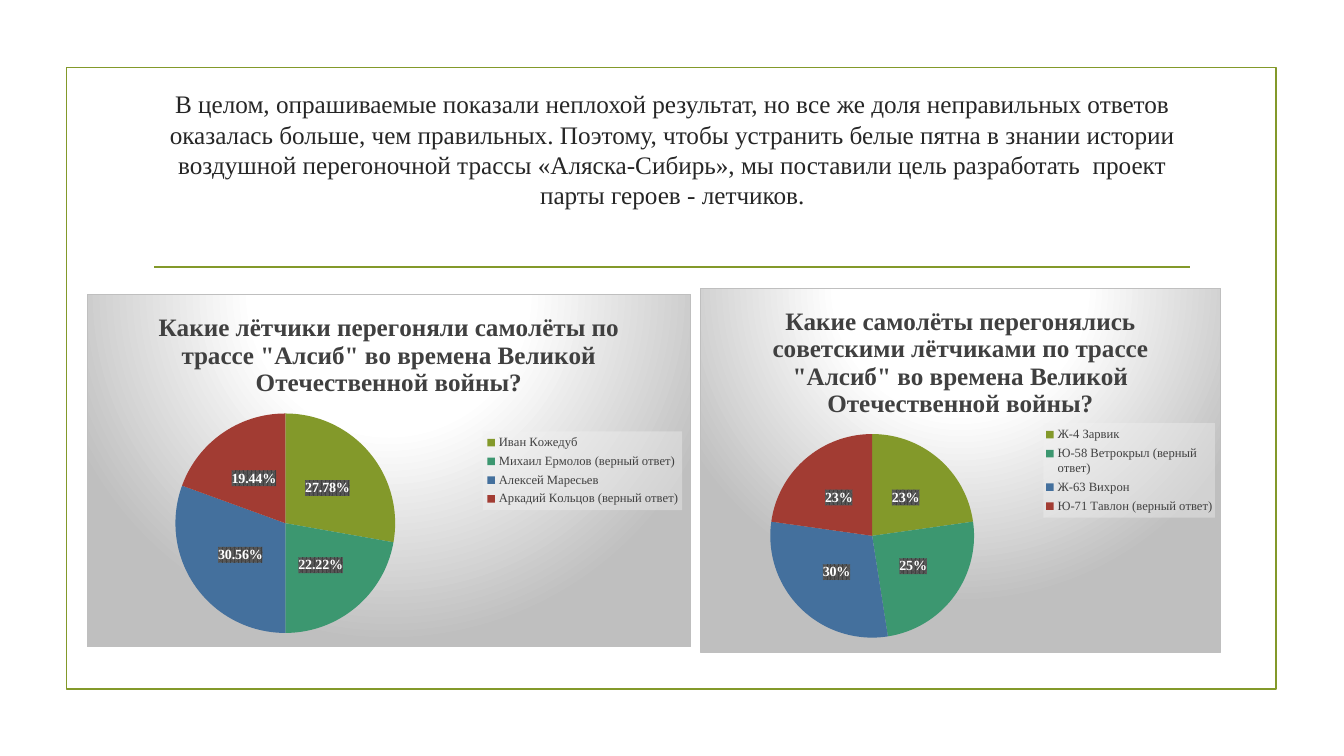
from dataclasses import dataclass

from pptx import Presentation, oxml, util as u
from pptx.chart.data import CategoryChartData
from pptx.dml.color import RGBColor
from pptx.enum import chart as charts, shapes, text
from pptx.oxml.ns import nsdecls


@dataclass(frozen=True)
class Theme:
    font: str = "Times New Roman"
    accent: str = "83992A"
    ink: str = "262626"
    soft_ink: str = "404040"
    white: str = "FFFFFF"
    slices: tuple = ("83992A", "3C9770", "44709D", "A23C33")
    heading: int = 18
    label: int = 10
    legend: int = 9
    stroke: float = 1.25


THEME = Theme()

PANEL_FILL = """<a:gradFill><a:gsLst>
<a:gs pos="0"><a:srgbClr val="FFFFFF"/></a:gs>
<a:gs pos="39000"><a:srgbClr val="FFFFFF"/></a:gs>
<a:gs pos="100000"><a:srgbClr val="BFBFBF"/></a:gs></a:gsLst>
<a:path path="circle"><a:fillToRect l="50000" t="-80000" r="50000" b="180000"/></a:path>
</a:gradFill><a:ln w="9525"><a:solidFill><a:srgbClr val="BFBFBF"/></a:solidFill></a:ln>"""
LEGEND_FILL = """<a:solidFill><a:srgbClr val="F2F2F2"><a:alpha val="39000"/></a:srgbClr></a:solidFill>"""
LABEL_FILL = """<a:pattFill prst="pct75"><a:fgClr><a:srgbClr val="404040"/></a:fgClr>
<a:bgClr><a:srgbClr val="595959"/></a:bgClr></a:pattFill>"""


def style(font, size, color, bold=False):
    font.name, font.size, font.bold = THEME.font, u.Pt(size), bold
    font.color.rgb = RGBColor.from_string(color)


def add_fill_after(element, fill):
    element.addnext(oxml.parse_xml(f'<c:spPr {nsdecls("c", "a")}>{fill}</c:spPr>'))


def set_layout(parent, index, box, inner=False):
    for old in parent.xpath("c:layout"):
        parent.remove(old)
    target = '<c:layoutTarget val="inner"/>' if inner else ""
    modes = '<c:xMode val="edge"/><c:yMode val="edge"/>'
    sizes = "".join(f'<c:{side} val="{value}"/>' for side, value in zip("xywh", box))
    parent.insert(index, oxml.parse_xml(
        f'<c:layout {nsdecls("c")}><c:manualLayout>{target}{modes}{sizes}</c:manualLayout></c:layout>'))


def add_frame(slide, left, top, width, height):
    frame = slide.shapes.add_shape(shapes.MSO_SHAPE.RECTANGLE, left, top, width, height)
    frame.shadow.inherit = False
    frame.fill.background()
    divider_left, divider_top = left + u.Cm(2.21), top + u.Cm(5.03)
    divider = slide.shapes.add_connector(
        shapes.MSO_CONNECTOR.STRAIGHT, divider_left, divider_top,
        divider_left + u.Cm(26.11), divider_top)
    divider._element.spPr.append(oxml.parse_xml(f'<a:effectLst {nsdecls("a")}/>'))
    for outline in (frame.line, divider.line):
        outline.color.rgb = RGBColor.from_string(THEME.accent)
        outline.width = u.Pt(THEME.stroke)


def add_conclusion(slide, left, top, width, height, wording):
    conclusion = slide.shapes.title
    conclusion.left, conclusion.top = left, top
    conclusion.width, conclusion.height = width, height
    body = conclusion.text_frame
    body.text = wording
    body.word_wrap = True
    body.auto_size = text.MSO_AUTO_SIZE.NONE
    body.vertical_anchor = text.MSO_ANCHOR.MIDDLE
    body.margin_bottom = u.Cm(1.68)
    paragraph = body.paragraphs[0]
    paragraph.alignment = text.PP_ALIGN.CENTER
    paragraph.line_spacing = 1.0
    style(paragraph.runs[0].font, THEME.heading, THEME.ink)


def add_survey(slide, left, top, width, height, question, answers, number_format, pie_box, legend_box):
    data = CategoryChartData()
    data.categories = list(answers)
    data.add_series("Series 1", list(answers.values()))
    survey = slide.shapes.add_chart(
        charts.XL_CHART_TYPE.PIE, left, top, width, height, data).chart
    style(survey.font, THEME.label, "000000")
    add_fill_after(survey.element.xpath("c:chart")[0], PANEL_FILL)

    survey.has_title = True
    heading = survey.chart_title.text_frame
    heading.text = question
    style(heading.paragraphs[0].runs[0].font, THEME.heading, THEME.soft_ink, True)

    pie = survey.plots[0]
    pie.vary_by_categories = True
    for index, color in enumerate(THEME.slices):
        piece = pie.series[0].points[index].format.fill
        piece.solid()
        piece.fore_color.rgb = RGBColor.from_string(color)
    set_layout(survey.element.xpath(".//c:plotArea")[0], 0, pie_box, inner=True)

    pie.has_data_labels = True
    labels = pie.data_labels
    labels.show_value = False
    labels.show_percentage = True
    labels.number_format = number_format
    labels.number_format_is_linked = False
    labels.position = charts.XL_LABEL_POSITION.CENTER
    style(labels.font, THEME.label, THEME.white, True)
    add_fill_after(survey.element.xpath(".//c:dLbls/c:numFmt")[0], LABEL_FILL)

    survey.has_legend = True
    survey.legend.position = charts.XL_LEGEND_POSITION.RIGHT
    survey.legend.include_in_layout = False
    style(survey.legend.font, THEME.legend, THEME.soft_ink)
    legend = survey.element.xpath(".//c:legend")[0]
    set_layout(legend, 1, legend_box)
    add_fill_after(legend.xpath("c:overlay")[0], LEGEND_FILL)


def main():
    deck = Presentation()
    deck.slide_width, deck.slide_height = u.Cm(33.87), u.Cm(19.05)
    slide = deck.slides.add_slide(deck.slide_layouts[5])
    add_frame(slide, u.Cm(1.68), u.Cm(1.7), u.Cm(30.48), u.Cm(15.67))
    add_conclusion(
        slide, u.Cm(3.61), u.Cm(2.72), u.Cm(26.67), u.Cm(3.63),
        "В целом, опрашиваемые показали неплохой результат, но все же доля неправильных ответов "
        "оказалась больше, чем правильных. Поэтому, чтобы устранить белые пятна в знании истории "
        "воздушной перегоночной трассы «Аляска-Сибирь», мы поставили цель разработать  проект "
        "парты героев - летчиков.")
    add_survey(
        slide, u.Cm(2.18), u.Cm(7.42), u.Cm(15.24), u.Cm(8.89),
        'Какие лётчики перегоняли самолёты по трассе "Алсиб" во времена Великой Отечественной войны?',
        {"Иван Кожедуб": 27.78, "Михаил Ермолов (верный ответ)": 22.22,
         "Алексей Маресьев": 30.56, "Аркадий Кольцов (верный ответ)": 19.44},
        "0.00%", (0.146, 0.337, 0.365, 0.624), (0.656, 0.388, 0.33, 0.224))
    add_survey(
        slide, u.Cm(17.65), u.Cm(7.26), u.Cm(13.11), u.Cm(9.19),
        'Какие самолёты перегонялись советскими лётчиками по трассе "Алсиб" '
        'во времена Великой Отечественной войны?',
        {"Ж-4 Зарвик": 23, "Ю-58 Ветрокрыл (верный ответ)": 25,
         "Ж-63 Вихрон": 30, "Ю-71 Тавлон (верный ответ)": 23},
        "0%", (0.13, 0.4, 0.4, 0.56), (0.66, 0.37, 0.33, 0.26))
    deck.save("out.pptx")


if __name__ == "__main__":
    main()
